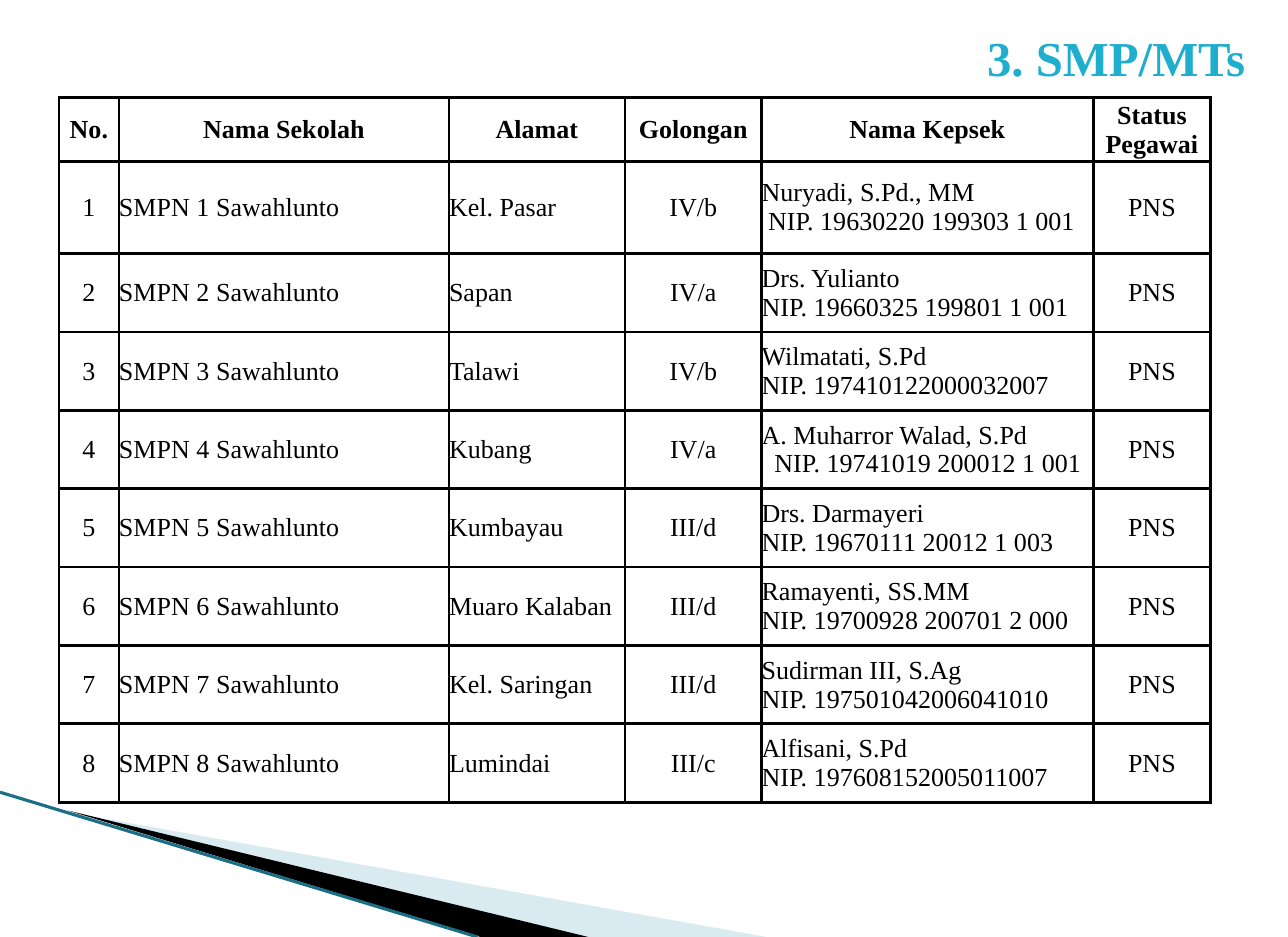
from lxml import etree
from pptx import Presentation, util as u
from pptx.dml.color import RGBColor
from pptx.enum import shapes, text
from pptx.oxml import ns, parse_xml

FONT = "Times New Roman"
COLORS = {"title": "1FAECD", "ink": "000000", "pale": "A0CBDC", "edge": "1B6E85"}
CENTER, LEFT, RIGHT = text.PP_ALIGN.CENTER, text.PP_ALIGN.LEFT, text.PP_ALIGN.RIGHT
HEADERS = ["No.", "Nama Sekolah", "Alamat", "Golongan", "Nama Kepsek", "Status Pegawai"]
ALIGNMENTS = [CENTER, LEFT, LEFT, CENTER, LEFT, CENTER]
COLUMN_WIDTHS = [0.65, 3.58, 1.91, 1.48, 3.6, 1.27]
ROW_HEIGHTS = [0.69, 1] + [0.85] * 7
SCHOOLS = [
    ("Kel. Pasar", "IV/b", "Nuryadi, S.Pd., MM", "NIP. 19630220 199303 1 001", 0.07),
    ("Sapan", "IV/a", "Drs. Yulianto", "NIP. 19660325 199801 1 001", 0),
    ("Talawi", "IV/b", "Wilmatati, S.Pd", "NIP. 197410122000032007", 0),
    ("Kubang", "IV/a", "A. Muharror Walad, S.Pd", "NIP. 19741019 200012 1 001", 0.14),
    ("Kumbayau", "III/d", "Drs. Darmayeri", "NIP. 19670111 20012 1 003", 0),
    ("Muaro Kalaban", "III/d", "Ramayenti, SS.MM", "NIP. 19700928 200701 2 000", 0),
    ("Kel. Saringan", "III/d", "Sudirman III, S.Ag", "NIP. 197501042006041010", 0),
    ("Lumindai", "III/c", "Alfisani, S.Pd", "NIP. 197608152005011007", 0),
]


class SlideBuilder:
    """Hold the style and the current slide, and add each kind of element."""

    def __init__(self, slide):
        self.slide = slide

    def color(self, name):
        return RGBColor.from_string(COLORS[name])

    def add_text(self, paragraph, words, size, color, bold, alignment, indent=0):
        paragraph.alignment = alignment
        if indent:
            paragraph._p.get_or_add_pPr().set("marL", str(u.Cm(indent)))
        run = paragraph.add_run()
        run.text = words
        run.font.name, run.font.size, run.font.bold = FONT, u.Pt(size), bold
        run.font.color.rgb = self.color(color)

    def wedge(self, points, color, opacity=100):
        corners = [(u.Cm(x), u.Cm(y)) for x, y in points]
        builder = self.slide.shapes.build_freeform(*corners[0])
        builder.add_line_segments(corners[1:])
        shape = builder.convert_to_shape()
        shape.shadow.inherit = False
        shape.line.fill.background()
        shape.fill.solid()
        shape.fill.fore_color.rgb = self.color(color)
        if opacity < 100:
            fill = shape._element.spPr.find(ns.qn("a:solidFill"))
            etree.SubElement(fill[0], ns.qn("a:alpha")).set("val", str(opacity * 1000))

    def line(self, start, end, color, width):
        ends = [u.Cm(value) for value in (*start, *end)]
        connector = self.slide.shapes.add_connector(shapes.MSO_CONNECTOR.STRAIGHT, *ends)
        connector.line.color.rgb = self.color(color)
        connector.line.width = u.Pt(width)
        etree.SubElement(connector._element.spPr, ns.qn("a:effectLst"))

    def title(self, words, left, top, width, height):
        shape = self.slide.shapes.title
        shape.left, shape.top = u.Cm(left), u.Cm(top)
        shape.width, shape.height = u.Cm(width), u.Cm(height)
        frame = shape.text_frame
        frame.auto_size = text.MSO_AUTO_SIZE.NONE
        frame.vertical_anchor = text.MSO_ANCHOR.MIDDLE
        frame.margin_left = frame.margin_right = u.Cm(0.13)
        frame.margin_top = frame.margin_bottom = u.Cm(0.08)
        self.add_text(frame.paragraphs[0], words, 15, "title", True, RIGHT)

    def border(self, cell, width):
        properties = cell._tc.get_or_add_tcPr()
        for index, side in enumerate("LRTB"):
            properties.insert(index, parse_xml(
                f'<a:ln{side} {ns.nsdecls("a")} w="{u.Pt(width)}"><a:solidFill>'
                f'<a:srgbClr val="{COLORS["ink"]}"/></a:solidFill></a:ln{side}>'))

    def cell(self, cell, lines, bold, alignment):
        cell.fill.background()
        self.border(cell, 1)
        cell.margin_left = cell.margin_right = cell.margin_top = cell.margin_bottom = 0
        cell.vertical_anchor = text.MSO_ANCHOR.MIDDLE
        frame = cell.text_frame
        for index, (words, indent) in enumerate(lines):
            paragraph = frame.add_paragraph() if index else frame.paragraphs[0]
            self.add_text(paragraph, words, 8, "ink", bold, alignment, indent)

    def table(self, rows, left, top):
        table = self.slide.shapes.add_table(
            len(rows), len(COLUMN_WIDTHS), u.Cm(left), u.Cm(top),
            u.Cm(sum(COLUMN_WIDTHS)), u.Cm(sum(ROW_HEIGHTS))).table
        table.first_row = table.horz_banding = False
        for column, width in zip(table.columns, COLUMN_WIDTHS):
            column.width = u.Cm(width)
        for row, height in zip(table.rows, ROW_HEIGHTS):
            row.height = u.Cm(height)
        for row_index, row in enumerate(rows):
            header = row_index == 0
            for column_index, lines in enumerate(row):
                alignment = CENTER if header else ALIGNMENTS[column_index]
                self.cell(table.cell(row_index, column_index), lines, header, alignment)


def school_row(number, school):
    address, grade, head, identity, indent = school
    plain = [str(number), f"SMPN {number} Sawahlunto", address, grade]
    return [[(words, 0)] for words in plain] + [[(head, 0), (identity, indent)], [("PNS", 0)]]


def main():
    presentation = Presentation()
    presentation.slide_width, presentation.slide_height = u.Cm(13.97), u.Cm(10.16)
    builder = SlideBuilder(presentation.slides.add_slide(presentation.slide_layouts[5]))
    builder.wedge([(0.76, 8.81), (8.31, 10.16), (6.38, 10.16)], "pale", 40)
    builder.wedge([(0.74, 8.79), (6.38, 10.16), (5.21, 10.16)], "ink")
    builder.line((0, 8.59), (5.18, 10.16), "edge", 0.95)
    builder.title("3. SMP/MTs", 0.64, 0.2, 13, 0.84)
    rows = [[[(words, 0)] for words in HEADERS]]
    rows += [school_row(number, school) for number, school in enumerate(SCHOOLS, 1)]
    builder.table(rows, 0.64, 1.06)
    presentation.save("out.pptx")


if __name__ == "__main__":
    main()
